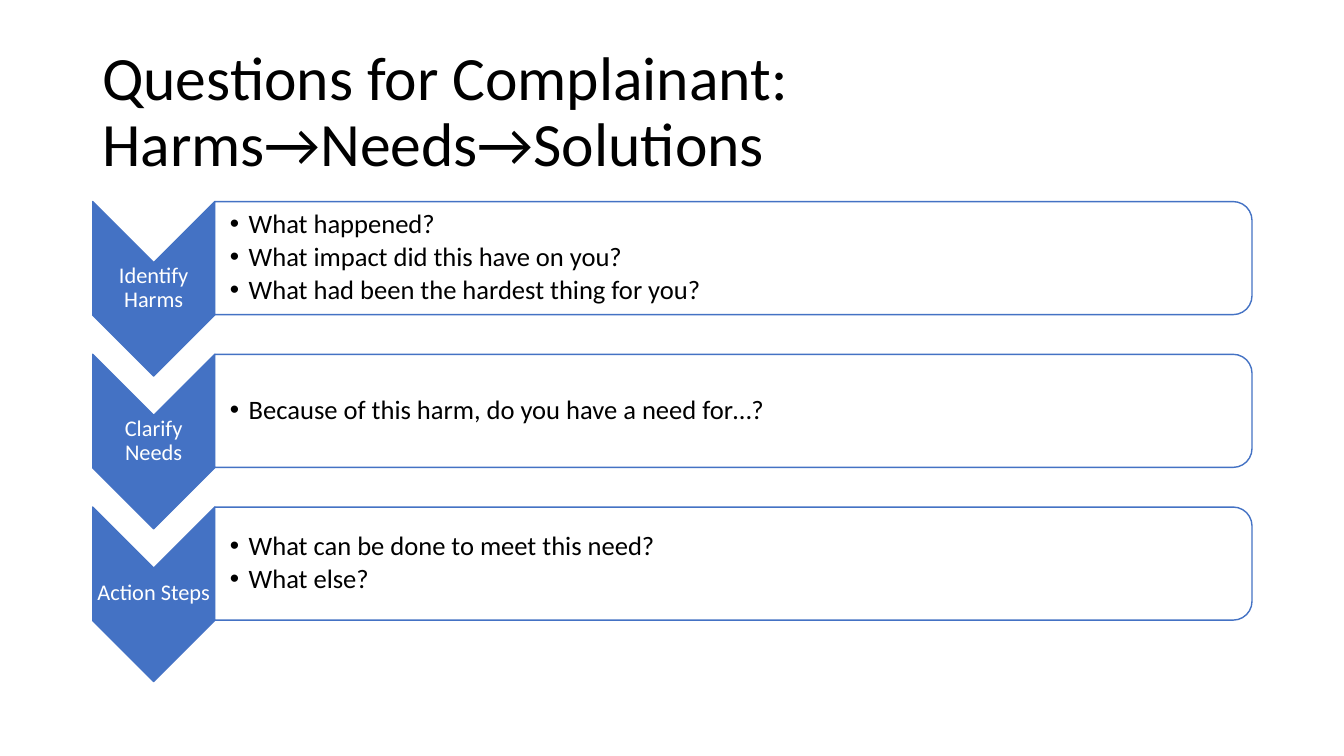
"""Build the slide that leads a complainant from harms to needs to solutions."""
from dataclasses import dataclass

from lxml import etree
from pptx import Presentation
from pptx import util as u
from pptx.dml import color
from pptx.enum import shapes, text
from pptx.oxml import ns
from pptx.shapes.autoshape import Shape
from pptx.slide import Slide

COLORS = {"accent": "4472C4", "white": "FFFFFF", "black": "000000"}
FONT = "Calibri"
FIRST_TOP = 144
ROW_PITCH = 109.1


@dataclass(frozen=True)
class Box:
    left: float
    top: float
    width: float
    height: float


@dataclass(frozen=True)
class Step:
    label: str
    questions: tuple[str, ...]


STEPS = (
    Step("Identify Harms", (
        "What happened?",
        "What impact did this have on you?",
        "What had been the hardest thing for you?",
    )),
    Step("Clarify Needs", ("Because of this harm, do you have a need for…?",)),
    Step("Action Steps", ("What can be done to meet this need?", "What else?")),
)


def rgb(name: str) -> color.RGBColor:
    return color.RGBColor.from_string(COLORS[name])


def add_text(
    slide: Slide,
    box: Box,
    lines: tuple[str, ...],
    *,
    size: float,
    color_name: str = "black",
    align: text.PP_ALIGN = text.PP_ALIGN.LEFT,
    insets: tuple[float, float, float, float] = (0.8, 0.8, 0.8, 0.8),
    space_after: float = 0,
    bullet_indent: float = 0,
) -> None:
    shape = slide.shapes.add_textbox(
        u.Pt(box.left), u.Pt(box.top), u.Pt(box.width), u.Pt(box.height))
    frame = shape.text_frame
    frame.word_wrap = True
    frame.vertical_anchor = text.MSO_ANCHOR.MIDDLE
    (frame.margin_left, frame.margin_top,
     frame.margin_right, frame.margin_bottom) = map(u.Pt, insets)
    frame.text = "\n".join(lines)
    for paragraph in frame.paragraphs:
        paragraph.alignment = align
        paragraph.line_spacing = 0.9
        paragraph.space_after = u.Pt(space_after)
        paragraph.font.size = u.Pt(size)
        for run in paragraph.runs:
            run.font.name = FONT
            run.font.size = u.Pt(size)
            run.font.color.rgb = rgb(color_name)
        if bullet_indent:
            properties = paragraph._p.get_or_add_pPr()
            properties.set("marL", str(u.Pt(bullet_indent)))
            properties.set("indent", str(-u.Pt(bullet_indent)))
            etree.SubElement(properties, ns.qn("a:buFont")).set("typeface", "Arial")
            etree.SubElement(properties, ns.qn("a:buChar")).set("char", "•")


def add_turned_shape(
    slide: Slide, kind: shapes.MSO_SHAPE, box: Box, fill: str
) -> Shape:
    """Fill the box with a preset shape that is turned a quarter clockwise."""
    shift = (box.width - box.height) / 2
    shape = slide.shapes.add_shape(
        kind, u.Pt(box.left + shift), u.Pt(box.top - shift),
        u.Pt(box.height), u.Pt(box.width))
    shape.rotation = 90
    shape.shadow.inherit = False
    shape.fill.solid()
    shape.fill.fore_color.rgb = rgb(fill)
    shape.line.color.rgb = rgb("accent")
    shape.line.width = u.Pt(1)
    return shape


def add_step(slide: Slide, step: Step, top: float) -> None:
    add_turned_shape(slide, shapes.MSO_SHAPE.CHEVRON,
                     Box(66.2, top, 87.2, 124.6), "accent")
    add_text(slide, Box(66.2, top + 43.2, 87.2, 37.4), (step.label,), size=16,
             color_name="white", align=text.PP_ALIGN.CENTER, space_after=5.6)
    panel = add_turned_shape(slide, shapes.MSO_SHAPE.ROUND_2_SAME_RECTANGLE,
                             Box(153.4, top, 740.9, 80.8), "white")
    panel_color = panel._element.spPr.find(ns.qn("a:solidFill"))[0]
    etree.SubElement(panel_color, ns.qn("a:alpha")).set("val", "90000")
    add_text(slide, Box(153.4, top + 3.9, 737.3, 72.9), step.questions, size=19,
             insets=(10.8, 0.8, 0.8, 0.8), space_after=2.85, bullet_indent=13.5)


def main() -> None:
    presentation = Presentation()
    presentation.slide_width = u.Pt(960)
    presentation.slide_height = u.Pt(540)
    slide = presentation.slides.add_slide(presentation.slide_layouts[6])
    add_text(slide, Box(66, 28.75, 828, 104.4),
             ("Questions for Complainant: Harms→Needs→Solutions",),
             size=44, insets=(7.2, 3.6, 7.2, 3.6))
    for row, step in enumerate(STEPS):
        add_step(slide, step, FIRST_TOP + row * ROW_PITCH)
    presentation.save("out.pptx")


if __name__ == "__main__":
    main()
